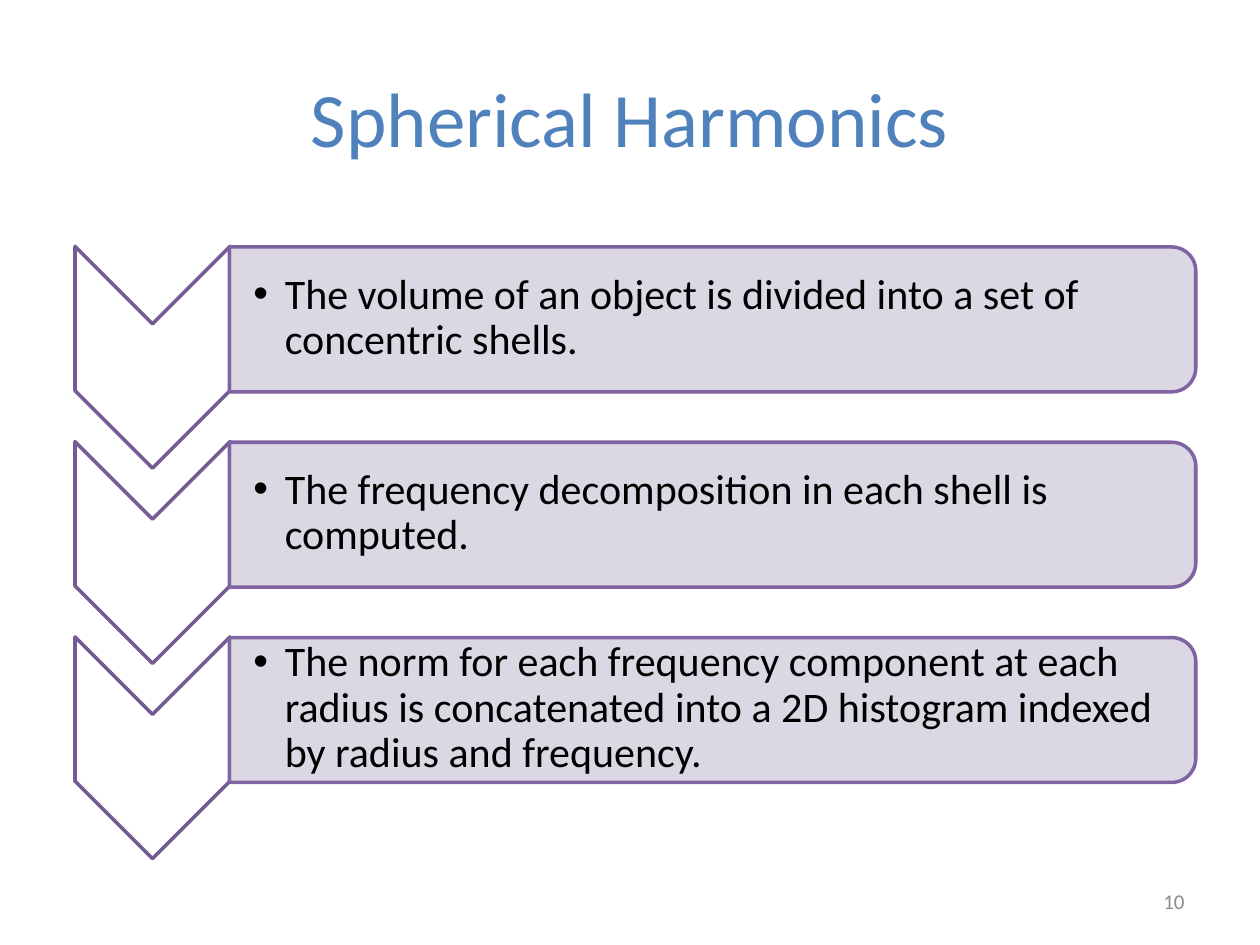
"""Build the Spherical Harmonics slide with three chevron steps."""
import pptx
import pptx.util
import pptx.dml.color
import pptx.enum.shapes
import pptx.enum.text
import pptx.oxml
import pptx.oxml.ns
import lxml.etree

Inches = pptx.util.Inches
RGBColor = pptx.dml.color.RGBColor
Kind = pptx.enum.shapes.MSO_SHAPE
Align = pptx.enum.text.PP_ALIGN
qn = pptx.oxml.ns.qn

BLUE = RGBColor(0x4F, 0x81, 0xBD)
GREY = RGBColor(0x8C, 0x8C, 0x8C)
WHITE = RGBColor(0xFF, 0xFF, 0xFF)
BLACK = RGBColor(0, 0, 0)
PLUM = RGBColor(0x74, 0x5B, 0x93)
VIOLET = RGBColor(0x80, 0x64, 0xA2)
LILAC = RGBColor(0xD8, 0xD3, 0xE0)

STEPS = [
    "The volume of an object is divided into a set of concentric shells.",
    "The frequency decomposition in each shell is computed.",
    "The norm for each frequency component at each radius is concatenated "
    "into a 2D histogram indexed by radius and frequency.",
]

deck = pptx.Presentation()
deck.slide_width = Inches(10)
deck.slide_height = Inches(7.5)
slide = deck.slides.add_slide(deck.slide_layouts[6])


def add_text(text, left, top, width, height, size, color, align):
    box = slide.shapes.add_textbox(Inches(left), Inches(top), Inches(width), Inches(height))
    frame = box.text_frame
    frame.word_wrap = True
    frame.vertical_anchor = pptx.enum.text.MSO_ANCHOR.MIDDLE
    para = frame.paragraphs[0]
    para.alignment = align
    run = para.add_run()
    run.text = text
    run.font.name = "Calibri"
    run.font.size = pptx.util.Pt(size)
    run.font.color.rgb = color
    return frame


def add_form(kind, left, top, width, height, fill, line):
    form = slide.shapes.add_shape(kind, Inches(left), Inches(top), Inches(width), Inches(height))
    form.rotation = 90
    form.shadow.inherit = False
    form.fill.solid()
    form.fill.fore_color.rgb = fill
    form.line.color.rgb = line
    form.line.width = pptx.util.Pt(2)
    return form


add_text("Spherical Harmonics", 0.5, 0.3, 9, 1.25, 44, BLUE, Align.CENTER)
add_text("10", 7.17, 6.95, 2.33, 0.4, 12, GREY, Align.RIGHT)

for i, step in enumerate(STEPS):
    drop = i * 1.55
    add_form(Kind.CHEVRON, 0.33, 2.22 + drop, 1.76, 1.23, WHITE, PLUM)
    panel = add_form(Kind.ROUND_2_SAME_RECTANGLE, 5.08, -1.3 + drop, 1.15, 7.67, LILAC, VIOLET)
    tint = panel.fill._xPr.find(qn("a:solidFill"))[0]
    lxml.etree.SubElement(tint, qn("a:alpha"), val="90000")

    frame = add_text(step, 1.82, 2.01 + drop, 7.61, 1.03, 24, BLACK, Align.LEFT)
    frame.margin_left = Inches(0.19)
    frame.margin_top = frame.margin_right = frame.margin_bottom = Inches(0.02)
    para = frame.paragraphs[0]
    para.level = 1
    para.line_spacing = 0.9
    props = para._p.get_or_add_pPr()
    props.set("marL", str(Inches(0.25)))
    props.set("indent", str(Inches(-0.25)))
    lxml.etree.SubElement(props, qn("a:buFont"), typeface="Arial")
    lxml.etree.SubElement(props, qn("a:buChar"), char="•")

deck.save("out.pptx")
